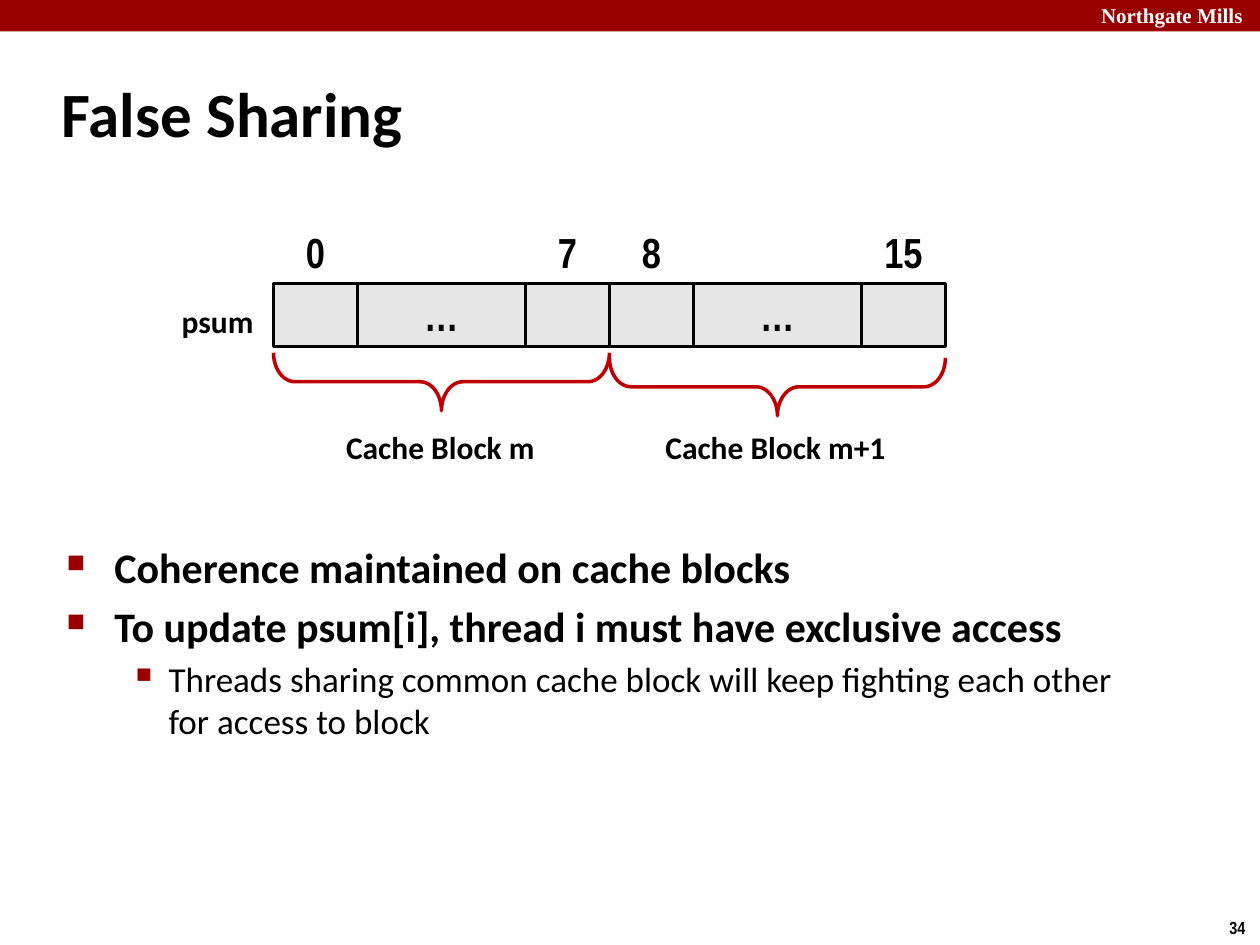
from lxml import etree
from pptx import Presentation
from pptx import util as u
from pptx.dml.color import RGBColor
from pptx.enum import shapes, text
from pptx.oxml.ns import qn

COLOURS = {"banner": "990000", "brace": "C00000", "cell": "E6E6E6",
           "ink": "000000", "white": "FFFFFF"}
LEFT, CENTER, RIGHT = text.PP_ALIGN.LEFT, text.PP_ALIGN.CENTER, text.PP_ALIGN.RIGHT
TOP, MIDDLE = text.MSO_ANCHOR.TOP, text.MSO_ANCHOR.MIDDLE

TITLE = "False Sharing"
# index above the cell, text in the cell, width in units
BLOCK_CELLS = [
    [("0", "", 1), ("", "…", 2), ("7", "", 1)],
    [("8", "", 1), ("", "…", 2), ("15", "", 1)],
]
BRACE_TOPS = [2.8, 2.84]
LABELS = [  # text, left, top, width, alignment
    ("Cache Block m", 2.64, 3.35, 1.71, CENTER),
    ("Cache Block m+1", 5.17, 3.35, 1.97, CENTER),
    ("psum", 1.33, 2.35, 0.78, RIGHT),
]
BULLETS = [  # level, text
    (0, "Coherence maintained on cache blocks"),
    (0, "To update psum[i], thread i must have exclusive access"),
    (1, "Threads sharing common cache block will keep fighting each other "
        "for access to block"),
]
LEVELS = [
    {"size": 24, "bold": True, "margin": 0.38, "hang": 0.38, "mark": "■", "percent": 60},
    {"size": 20, "bold": False, "margin": 0.81, "hang": 0.31, "mark": "▪", "percent": 110},
]
ROW_LEFT, ROW_TOP, CELL_HEIGHT = 2.17, 2.25, 0.5
UNIT = 2 / 3
BRACE_DEPTH = 0.46


def colour(name):
    return RGBColor.from_string(COLOURS[name])


def write(shape, words, size=24, font="Calibri", bold=True, ink="ink",
          align=LEFT, anchor=TOP, wrap=False, new=False):
    """Put words in the first paragraph of the shape, or in a new one."""
    frame = shape.text_frame
    frame.word_wrap = wrap
    frame.auto_size = text.MSO_AUTO_SIZE.NONE
    frame.vertical_anchor = anchor
    paragraph = frame.add_paragraph() if new else frame.paragraphs[0]
    paragraph.alignment = align
    run = paragraph.add_run()
    run.text = words
    run.font.size = u.Pt(size)
    run.font.name = font
    run.font.bold = bold
    run.font.color.rgb = colour(ink)
    return paragraph


def add_text(slide, box, words, **style):
    return write(slide.shapes.add_textbox(*map(u.Inches, box)), words, **style)


def add_shape(slide, kind, box, fill=None, line=None):
    shape = slide.shapes.add_shape(kind, *map(u.Inches, box))
    shape.shadow.inherit = False
    if fill:
        shape.fill.solid()
        shape.fill.fore_color.rgb = colour(fill)
    else:
        shape.fill.background()
    if line:
        shape.line.color.rgb = colour(line)
        shape.line.width = u.Pt(2)
    else:
        shape.line.fill.background()
    return shape


def set_bullet(paragraph, level):
    properties = paragraph._p.get_or_add_pPr()
    properties.set("marL", str(u.Inches(level["margin"])))
    properties.set("indent", str(-u.Inches(level["hang"])))
    bullet_colour = etree.SubElement(properties, qn("a:buClr"))
    etree.SubElement(bullet_colour, qn("a:srgbClr"), val=COLOURS["banner"])
    etree.SubElement(properties, qn("a:buSzPct"), val=str(level["percent"] * 1000))
    etree.SubElement(properties, qn("a:buChar"), char=level["mark"])


def add_bullets(slide):
    body = slide.shapes.add_textbox(*map(u.Inches, (0.43, 4.25, 8.64, 2.68)))
    for number, (depth, words) in enumerate(BULLETS):
        level = LEVELS[depth]
        paragraph = write(body, words, size=level["size"], bold=level["bold"],
                          wrap=True, new=number > 0)
        paragraph.level = depth
        paragraph.space_before = u.Pt(level["size"] * 0.2)
        set_bullet(paragraph, level)


def add_array(slide):
    style = {"font": "Arial Narrow", "align": CENTER, "anchor": MIDDLE}
    left = ROW_LEFT
    for cells, brace_top in zip(BLOCK_CELLS, BRACE_TOPS):
        block_left = left
        for index, content, units in cells:
            width = units * UNIT
            cell = add_shape(slide, shapes.MSO_SHAPE.RECTANGLE,
                             (left, ROW_TOP, width, CELL_HEIGHT), "cell", "ink")
            if content:
                write(cell, content, **style)
            if index:
                add_text(slide, (left, ROW_TOP - CELL_HEIGHT, width, CELL_HEIGHT),
                         index, **style)
            left += width
        add_brace(slide, block_left, left, brace_top)


def add_brace(slide, left, right, top):
    """Turn a right brace by 90 degrees so that it spans left to right."""
    span = right - left
    box = ((left + right - BRACE_DEPTH) / 2, top + (BRACE_DEPTH - span) / 2,
           BRACE_DEPTH, span)
    brace = add_shape(slide, shapes.MSO_SHAPE.RIGHT_BRACE, box, line="brace")
    brace.rotation = 90
    brace.adjustments[0] = 0.37


def main():
    presentation = Presentation()
    presentation.slide_width, presentation.slide_height = u.Inches(10), u.Inches(7.5)
    slide = presentation.slides.add_slide(presentation.slide_layouts[5])

    add_shape(slide, shapes.MSO_SHAPE.RECTANGLE, (0, 0, 10, 0.25), "banner")
    add_text(slide, (8.64, -0.03, 1.43, 0.3), "Northgate Mills", size=12,
             font="Times New Roman", ink="white")
    add_text(slide, (9.66, 7.23, 0.34, 0.27), "34", size=10, font="Arial Narrow")

    title = slide.shapes.title
    title.left, title.top, title.width, title.height = map(
        u.Inches, (0.39, 0.48, 8.3, 0.83))
    write(title, TITLE, size=36, anchor=MIDDLE, wrap=True)

    add_bullets(slide)
    add_array(slide)
    for words, left, top, width, align in LABELS:
        add_text(slide, (left, top, width, 0.4), words, size=18, align=align)
    presentation.save("out.pptx")


if __name__ == "__main__":
    main()
